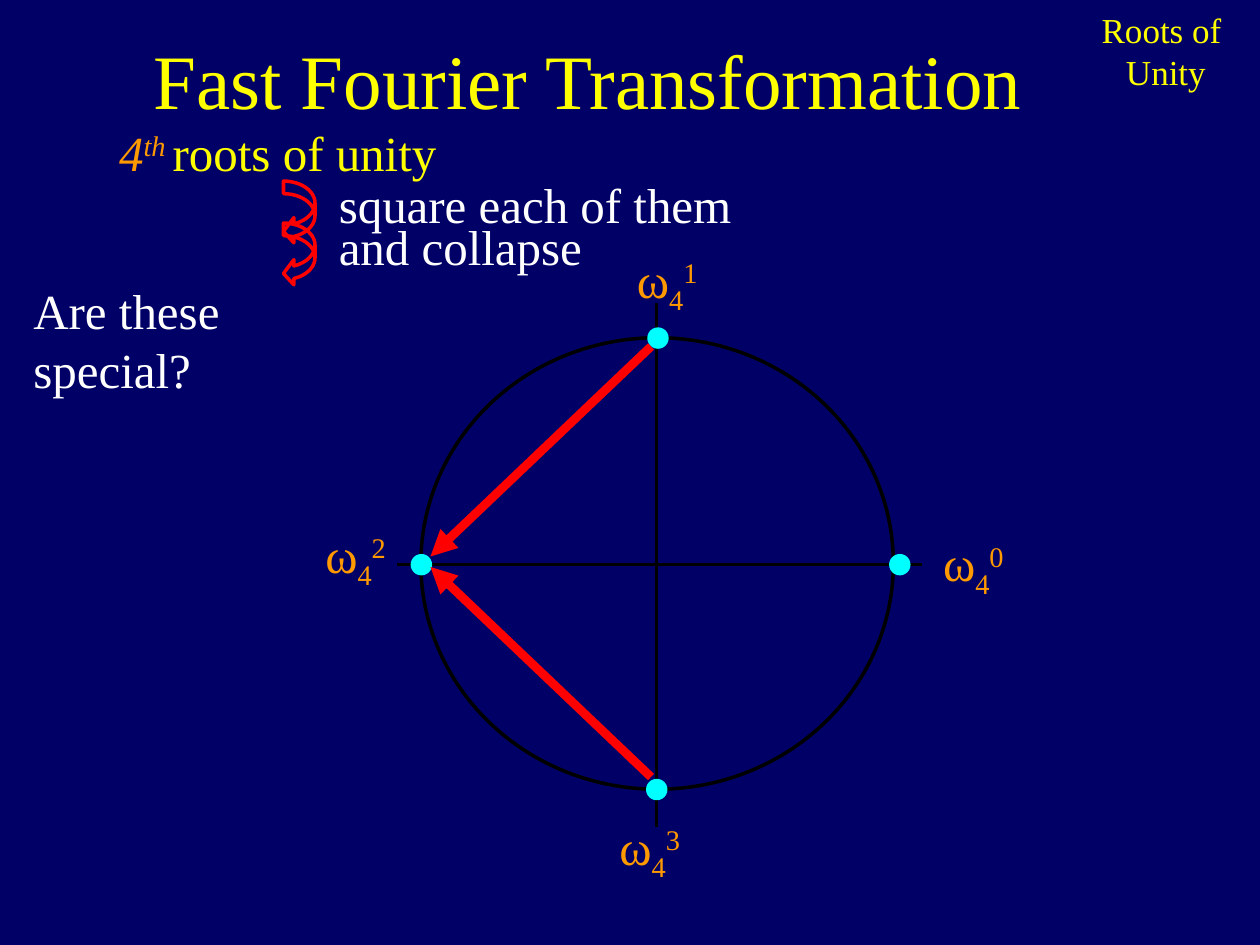
from lxml.etree import SubElement
from pptx import Presentation
from pptx.dml.color import RGBColor
from pptx.enum.shapes import MSO_CONNECTOR, MSO_SHAPE
from pptx.enum.text import MSO_ANCHOR, MSO_AUTO_SIZE, PP_ALIGN
from pptx.oxml.ns import qn
from pptx.util import Pt

COLORS = {
    "background": "000066",
    "axis": "000000",
    "root": "00FFFF",
    "label": "FF9900",
    "heading": "FFFF00",
    "text": "FFFFFF",
    "arrow": "FF0000",
}


class RootsSlide:
    """Hold the style and the current slide, and draw its elements in points."""

    font_name = "Times New Roman"
    text_size = 28
    line_height = 41
    dot_size = 12.24

    def __init__(self, presentation):
        self.slide = presentation.slides.add_slide(presentation.slide_layouts[5])
        fill = self.slide.background.fill
        fill.solid()
        fill.fore_color.rgb = self.color("background")

    def color(self, name):
        return RGBColor.from_string(COLORS[name])

    def style(self, paragraph, color, size, align):
        paragraph.alignment = align
        paragraph.font.name = self.font_name
        paragraph.font.size = Pt(size)
        paragraph.font.color.rgb = self.color(color)

    def title(self, text, left, top, width, height):
        heading = self.slide.shapes.title
        heading.left, heading.top = Pt(left), Pt(top)
        heading.width, heading.height = Pt(width), Pt(height)
        frame = heading.text_frame
        frame.text = text
        frame.auto_size = MSO_AUTO_SIZE.NONE
        frame.vertical_anchor = MSO_ANCHOR.MIDDLE
        self.style(frame.paragraphs[0], "heading", 44, PP_ALIGN.CENTER)

    def text(self, text, left, top, width, height=line_height, color="text",
             size=text_size, align=PP_ALIGN.LEFT, wrap=False, group=None):
        shapes = (group or self.slide).shapes
        frame = shapes.add_textbox(Pt(left), Pt(top), Pt(width), Pt(height)).text_frame
        frame.word_wrap = wrap
        frame.auto_size = MSO_AUTO_SIZE.SHAPE_TO_FIT_TEXT
        paragraph = frame.paragraphs[0]
        paragraph.text = text
        self.style(paragraph, color, size, align)
        return paragraph

    def run(self, paragraph, text, baseline=0, italic=False, color=None):
        run = paragraph.add_run()
        run.text = text
        if italic:
            run.font.italic = True
        if color:
            run.font.color.rgb = self.color(color)
        if baseline:
            run.font._element.set("baseline", str(baseline * 1000))

    def omega(self, power, left, top):
        label = self.text("ω", left, top, 52.5, color="label", align=PP_ALIGN.CENTER)
        self.run(label, "4", baseline=-25)
        self.run(label, power, baseline=30)

    def outline(self, kind, left, top, width, height, color, group=None):
        shapes = (group or self.slide).shapes
        shape = shapes.add_shape(kind, Pt(left), Pt(top), Pt(width), Pt(height))
        shape.shadow.inherit = False
        shape.fill.background()
        shape.line.color.rgb = self.color(color)
        shape.line.width = Pt(2)
        return shape

    def dot(self, x, y):
        radius = self.dot_size / 2
        dot = self.slide.shapes.add_shape(
            MSO_SHAPE.OVAL, Pt(x - radius), Pt(y - radius),
            Pt(self.dot_size), Pt(self.dot_size))
        dot.shadow.inherit = False
        dot.fill.solid()
        dot.fill.fore_color.rgb = self.color("root")
        dot.line.fill.background()

    def line(self, start, end, color, width, arrow=False):
        points = [Pt(value) for value in (*start, *end)]
        line = self.slide.shapes.add_connector(MSO_CONNECTOR.STRAIGHT, *points)
        line.line.color.rgb = self.color(color)
        line.line.width = Pt(width)
        if arrow:
            SubElement(line.line._get_or_add_ln(), qn("a:tailEnd"), type="triangle")
        SubElement(line._element.spPr, qn("a:effectLst"))

    def step(self, text, top, width):
        group = self.slide.shapes.add_group_shape()
        bend = self.outline(MSO_SHAPE.CURVED_LEFT_ARROW, 162, top, 18, 36, "arrow", group)
        for index, value in enumerate((0.4, 0.8, 0.33)):
            bend.adjustments[index] = value
        self.text(text, 186.5, top - 7.5, width, group=group)


def main():
    presentation = Presentation()
    presentation.slide_width, presentation.slide_height = Pt(720), Pt(540)
    page = RootsSlide(presentation)

    page.outline(MSO_SHAPE.OVAL, 240.5, 193, 270, 258, "axis")
    page.line((227, 322.5), (527, 322.5), "axis", 2)
    page.line((375.3, 472.5), (375.3, 173), "axis", 2)

    for x, y in ((240.8, 322.7), (514.2, 322.7), (376, 193.2), (375.3, 451.2)):
        page.dot(x, y)
    for power, left, top in (("0", 530, 301), ("1", 355, 139),
                             ("2", 177, 296), ("3", 345, 463)):
        page.omega(power, left, top)

    page.title("Fast Fourier Transformation", 30, 0, 612, 90)
    order = page.text("", 61, 66.3, 201, color="label")
    page.run(order, "4", italic=True)
    page.run(order, "th ", baseline=30, italic=True)
    page.run(order, "roots of unity", color="heading")
    page.text("Are these special?", 12, 157, 217.5)

    page.step("square each of them", 103.5, 239)
    for start_y, end_y in ((198, 318), (444, 324)):
        page.line((372, start_y), (246, end_y), "arrow", 5, arrow=True)
    page.step("and collapse", 127.5, 153.5)

    page.text("Roots of \vUnity", 622, 1.5, 88.5, 55.5, color="heading", size=20,
              align=PP_ALIGN.CENTER, wrap=True)

    presentation.save("out.pptx")


if __name__ == "__main__":
    main()
